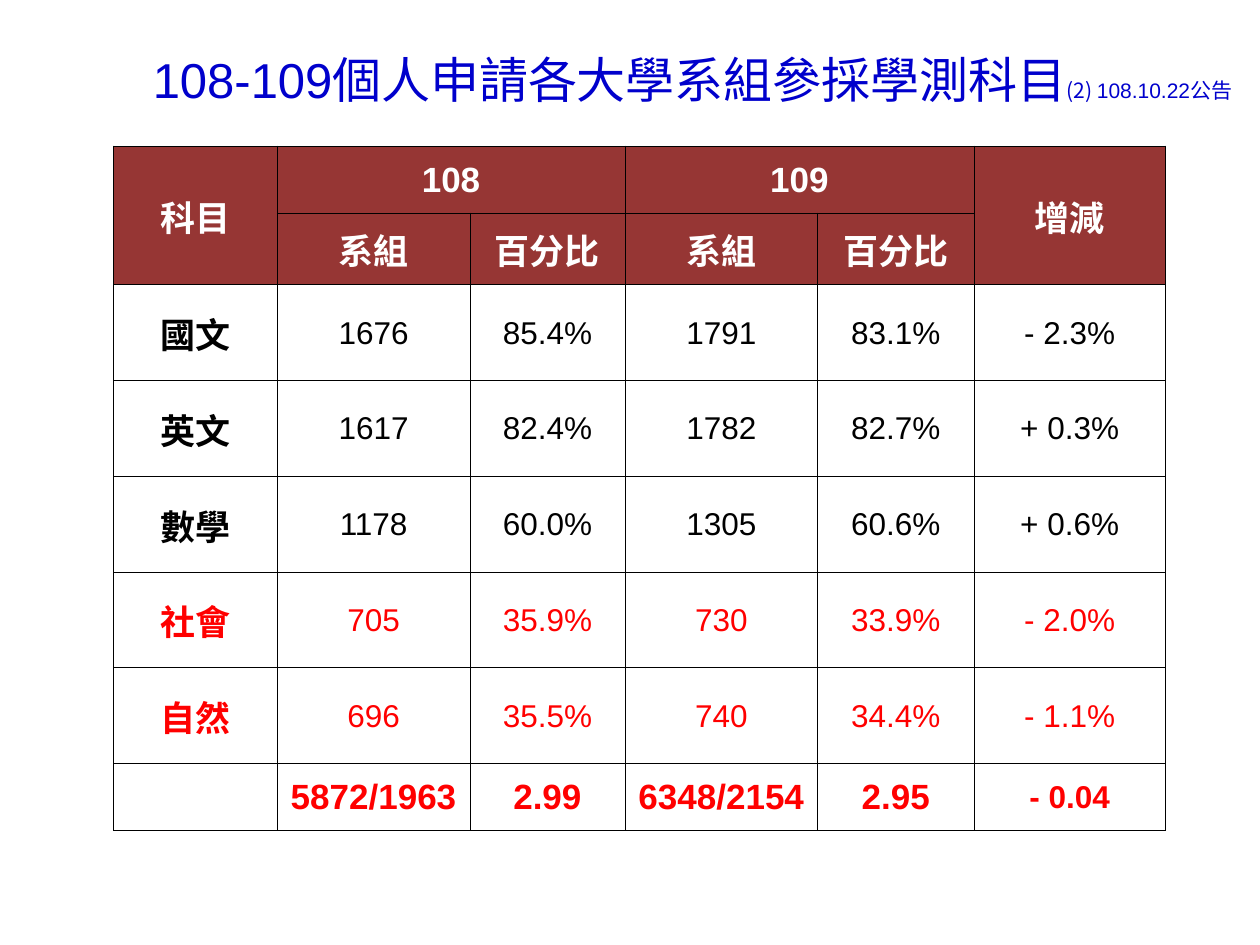
"""Build a slide comparing the exam subjects adopted in years 108 and 109."""
import pptx
import pptx.util
import pptx.dml.color
import pptx.enum.text
import pptx.oxml
import pptx.oxml.ns
from pptx.util import Inches

LATIN, CJK = "Arial", "Noto Sans CJK SC"
WHITE, BLACK, RED, BLUE, MAROON = "FFFFFF", "000000", "FF0000", "0000CC", "963634"
COLUMN_WIDTHS = [1.3, 1.53, 1.23, 1.53, 1.24, 1.52]
ROW_HEIGHTS = [0.53, 0.57] + [0.76] * 5 + [0.53]
HEADER_ROWS = 2
TOTAL_ROW = len(ROW_HEIGHTS) - 1
RED_FROM_ROW = 5
HEADER_SPANS = [(0, 0, 1, 0), (0, 1, 0, 2), (0, 3, 0, 4), (0, 5, 1, 5)]
SUBJECTS = [
    ["科目", "108", "", "109", "", "增減"],
    ["", "系組", "百分比", "系組", "百分比", ""],
    ["國文", "1676", "85.4%", "1791", "83.1%", "- 2.3%"],
    ["英文", "1617", "82.4%", "1782", "82.7%", "+ 0.3%"],
    ["數學", "1178", "60.0%", "1305", "60.6%", "+ 0.6%"],
    ["社會", "705", "35.9%", "730", "33.9%", "- 2.0%"],
    ["自然", "696", "35.5%", "740", "34.4%", "- 1.1%"],
    ["", "5872/1963", "2.99", "6348/2154", "2.95", "- 0.04"],
]
TITLE_PARTS = [
    ("108-109", 28, LATIN),
    ("個人申請各大學系組參採學測科目", 28, CJK),
    ("(2) ", 12, CJK),
    ("108.10.22", 12, LATIN),
    ("公告", 12, CJK),
]


def rgb(hex_color):
    """Return the colour for a hex string."""
    return pptx.dml.color.RGBColor.from_string(hex_color)


def format_run(run, size, typeface, color, bold=False):
    """Set the size, typeface, colour and weight of a run."""
    run.font.size = pptx.util.Pt(size)
    run.font.bold = bold
    run.font.color.rgb = rgb(color)
    run.font.name = typeface
    latin = run.font._element.find(pptx.oxml.ns.qn("a:latin"))
    latin.addnext(pptx.oxml.parse_xml(
        f'<a:ea {pptx.oxml.ns.nsdecls("a")} typeface="{typeface}"/>'))


def add_borders(cell):
    """Draw a thin black line on each side of a cell."""
    properties = cell._tc.get_or_add_tcPr()
    for side in "LRTB":
        properties.append(pptx.oxml.parse_xml(
            f'<a:ln{side} {pptx.oxml.ns.nsdecls("a")} w="6350"><a:solidFill>'
            f'<a:srgbClr val="{BLACK}"/></a:solidFill></a:ln{side}>'))


def fill_cell(cell, text, row, column):
    """Write and format one cell according to its place in the table."""
    is_header, is_total = row < HEADER_ROWS, row == TOTAL_ROW
    add_borders(cell)
    if is_header:
        cell.fill.solid()
        cell.fill.fore_color.rgb = rgb(MAROON)
    else:
        cell.fill.background()
    if not text:
        return
    cell.margin_left = cell.margin_right = cell.margin_top = Inches(0.01)
    cell.margin_bottom = 0
    cell.vertical_anchor = pptx.enum.text.MSO_ANCHOR.MIDDLE
    cell.text_frame.text = text
    paragraph = cell.text_frame.paragraphs[0]
    paragraph.alignment = pptx.enum.text.PP_ALIGN.CENTER
    is_change = column == len(COLUMN_WIDTHS) - 1
    is_large = is_header or column == 0 or (is_total and not is_change)
    color = WHITE if is_header else RED if row >= RED_FROM_ROW else BLACK
    format_run(paragraph.runs[0], 20 if is_large else 18,
               LATIN if text.isascii() else CJK, color,
               is_header or column == 0 or is_total)


def add_subject_table(slide):
    """Add the table of departments and percentages by subject."""
    table = slide.shapes.add_table(
        len(ROW_HEIGHTS), len(COLUMN_WIDTHS), Inches(0.9), Inches(1.16),
        Inches(sum(COLUMN_WIDTHS)), Inches(sum(ROW_HEIGHTS))).table
    table.first_row = table.horz_banding = False
    for column, width in zip(table.columns, COLUMN_WIDTHS):
        column.width = Inches(width)
    for row, height in zip(table.rows, ROW_HEIGHTS):
        row.height = Inches(height)
    for top, left, bottom, right in HEADER_SPANS:
        table.cell(top, left).merge(table.cell(bottom, right))
    for row, texts in enumerate(SUBJECTS):
        for column, text in enumerate(texts):
            fill_cell(table.cell(row, column), text, row, column)


def set_title(slide):
    """Place the title and write its parts."""
    title = slide.shapes.title
    title.left, title.top = Inches(-0.51), Inches(0.21)
    title.width, title.height = Inches(10.39), Inches(0.71)
    frame = title.text_frame
    frame.word_wrap = True
    frame.auto_size = pptx.enum.text.MSO_AUTO_SIZE.NONE
    frame.vertical_anchor = pptx.enum.text.MSO_ANCHOR.BOTTOM
    paragraph = frame.paragraphs[0]
    paragraph.alignment = pptx.enum.text.PP_ALIGN.RIGHT
    paragraph.line_spacing = 0.9
    for text, size, typeface in TITLE_PARTS:
        run = paragraph.add_run()
        run.text = text
        format_run(run, size, typeface, BLUE)


def main():
    """Build and save the presentation."""
    presentation = pptx.Presentation()
    presentation.slide_width, presentation.slide_height = Inches(10), Inches(7.5)
    slide = presentation.slides.add_slide(presentation.slide_layouts[5])
    add_subject_table(slide)
    set_title(slide)
    presentation.save("out.pptx")


if __name__ == "__main__":
    main()
